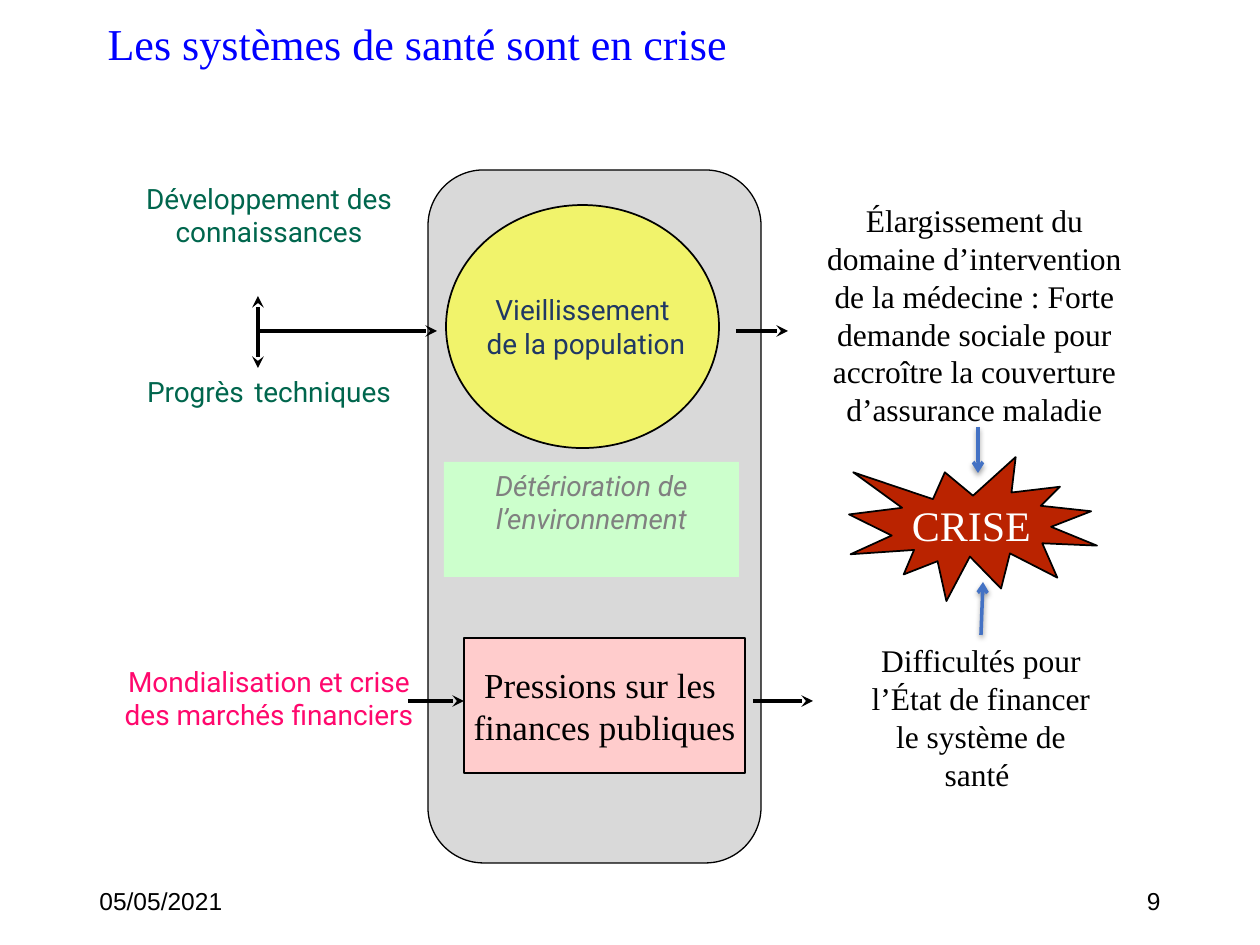
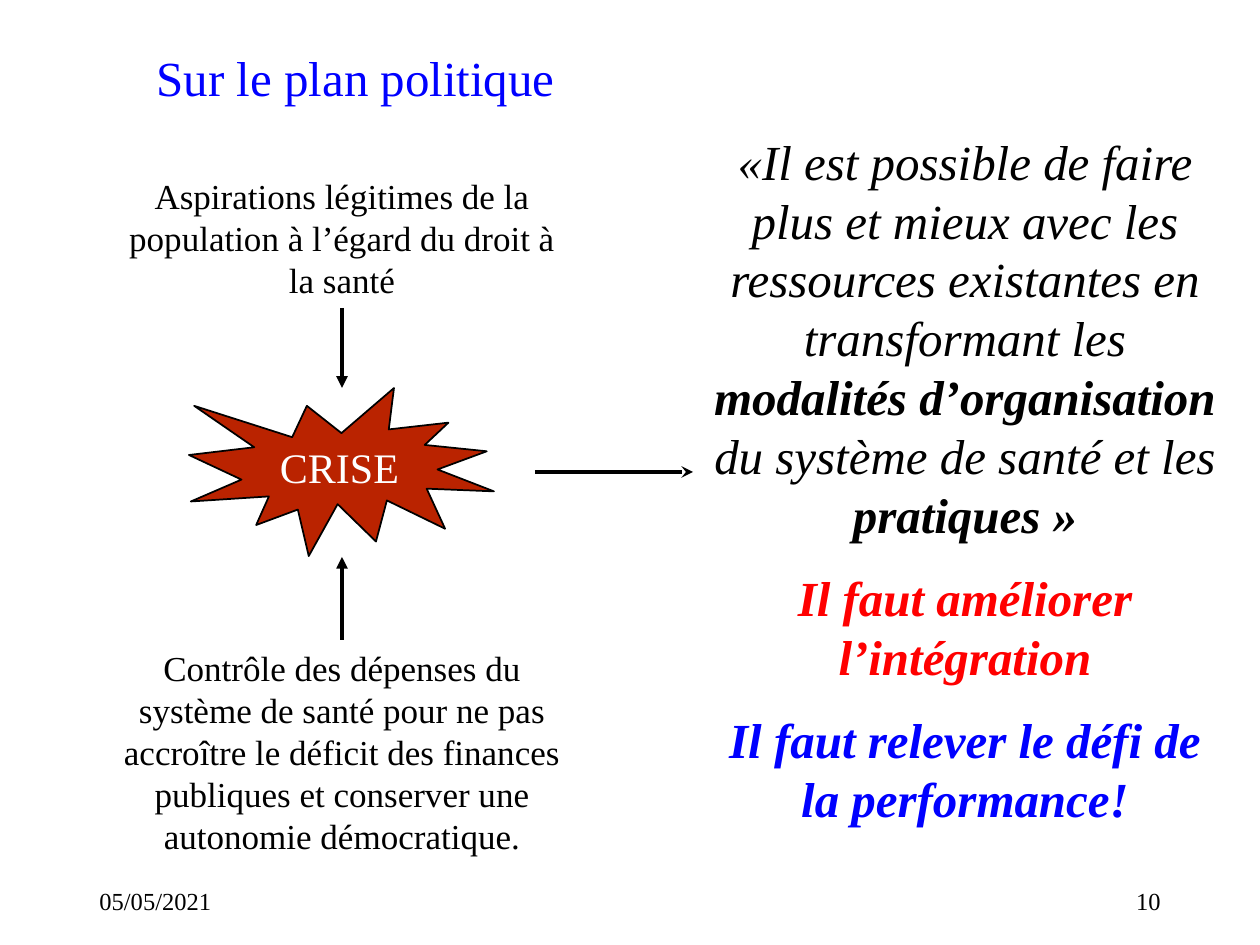
from dataclasses import dataclass

from pptx import Presentation
from pptx.dml.color import RGBColor
from pptx.enum.shapes import MSO_CONNECTOR, MSO_SHAPE
from pptx.enum.text import MSO_ANCHOR, MSO_AUTO_SIZE, PP_ALIGN
from pptx.oxml.ns import qn
from pptx.util import Pt
from lxml import etree

LEFT, CENTER, RIGHT = PP_ALIGN.LEFT, PP_ALIGN.CENTER, PP_ALIGN.RIGHT
TOP, MIDDLE = MSO_ANCHOR.TOP, MSO_ANCHOR.MIDDLE
RECTANGLE, OVAL = MSO_SHAPE.RECTANGLE, MSO_SHAPE.OVAL
ROUNDED, SEAL = MSO_SHAPE.ROUNDED_RECTANGLE, MSO_SHAPE.EXPLOSION1
STRAIGHT = MSO_CONNECTOR.STRAIGHT
SITE_TOP, SITE_BOTTOM = 0, 2
TITLE_ONLY = 5
EMU_PER_PX = 914400 / 126


@dataclass(frozen=True)
class Theme:
    serif: str = "Times New Roman"
    sans: str = "Roboto"
    plain: str = "Arial"
    black: str = "000000"
    white: str = "FFFFFF"
    blue: str = "0000FF"
    red: str = "FF0000"
    green: str = "00664D"
    pink: str = "FF086D"
    navy: str = "203864"
    gray: str = "808080"
    panel: str = "D9D9D9"
    yellow: str = "F1F36B"
    mint: str = "CCFFCC"
    rose: str = "FFCCCC"
    crisis: str = "BA2300"
    accent: str = "4472C4"
    footer_size: int = 14
    small: int = 16
    effect: int = 18
    body: int = 20
    large: int = 24
    quote: int = 28


THEME = Theme()


@dataclass(frozen=True)
class Style:
    font: str = THEME.serif
    size: float = THEME.body
    color: str = THEME.black
    bold: bool = False
    italic: bool = False


def px(length):
    return round(length * EMU_PER_PX)


def place(box, left, top, width, height):
    """Turn a position inside a box into slide lengths."""
    return px(box[0] + left), px(box[1] + top), px(width), px(height)


# ---- Text ----

def format_run(run, style):
    font = run.font
    font.name, font.size = style.font, Pt(style.size)
    font.bold, font.italic = style.bold, style.italic
    font.color.rgb = RGBColor.from_string(style.color)


def write(shape, paragraphs, align=CENTER, anchor=TOP, wrap=True, gap=0):
    """Fill a shape; each paragraph is a list of (text, style) runs."""
    frame = shape.text_frame
    frame.auto_size = MSO_AUTO_SIZE.NONE
    frame.word_wrap, frame.vertical_anchor = wrap, anchor
    for index, runs in enumerate(paragraphs):
        paragraph = frame.add_paragraph() if index else frame.paragraphs[0]
        paragraph.alignment = align
        if index:
            paragraph.space_before = Pt(gap)
        for text, style in runs:
            run = paragraph.add_run()
            run.text = text
            format_run(run, style)


def add_text(slide, box, area, paragraphs, **options):
    shape = slide.shapes.add_textbox(*place(box, *area))
    write(shape, paragraphs, **options)
    return shape


# ---- Shapes and arrows ----

def add_block(slide, box, area, kind, fill, line_width=None):
    shape = slide.shapes.add_shape(kind, *place(box, *area))
    shape.shadow.inherit = False
    shape.fill.solid()
    shape.fill.fore_color.rgb = RGBColor.from_string(fill)
    if line_width:
        shape.line.color.rgb = RGBColor.from_string(THEME.black)
        shape.line.width = Pt(line_width)
    else:
        shape.line.fill.background()
    return shape


def add_crisis(slide, box, area):
    seal = add_block(slide, box, area, SEAL, THEME.crisis, 1)
    style = Style(size=THEME.large, color=THEME.white)
    write(seal, [[("CRISE", style)]], anchor=MIDDLE, wrap=False)


def add_soft_shadow(effects):
    shadow = etree.SubElement(effects, qn("a:outerShdw"), blurRad="39370",
                              dist="20320", dir="5400000", rotWithShape="0")
    color = etree.SubElement(shadow, qn("a:srgbClr"), val=THEME.black)
    etree.SubElement(color, qn("a:alpha"), val="38000")


def add_arrow(slide, box, start, end, tip="stealth", both=False,
              color=THEME.black, width=2.25, shadow=False, source=None):
    """Draw an arrow; source is a (shape, site) pair joined to its start."""
    points = [px(box[axis] + point[axis])
              for point in (start, end) for axis in (0, 1)]
    arrow = slide.shapes.add_connector(STRAIGHT, *points)
    if source:
        arrow.begin_connect(*source)
    arrow.line.color.rgb = RGBColor.from_string(color)
    arrow.line.width = Pt(width)
    properties = arrow.element.spPr
    line = properties.find(qn("a:ln"))
    if both:
        etree.SubElement(line, qn("a:headEnd"), type=tip)
    etree.SubElement(line, qn("a:tailEnd"), type=tip)
    effects = etree.SubElement(properties, qn("a:effectLst"))
    if shadow:
        add_soft_shadow(effects)


# ---- Shared frame: title and footer ----

def add_slide(presentation, title, title_area, title_size, title_anchor,
              number, footer_font):
    slide = presentation.slides.add_slide(
        presentation.slide_layouts[TITLE_ONLY])
    heading = slide.shapes.title
    heading.left, heading.top, heading.width, heading.height = place(
        (0, 0), *title_area)
    write(heading, [[(title, Style(size=title_size, color=THEME.blue))]],
          align=LEFT, anchor=title_anchor)
    heading.text_frame.paragraphs[0].line_spacing = 0.9

    style = Style(footer_font, THEME.footer_size)
    for left, text, align in ((87, "05/05/2021", LEFT), (890, number, RIGHT)):
        add_text(slide, (left, 876), (0, 0, 283, 50), [[(text, style)]],
                 align=align, anchor=MIDDLE)
    return slide


# ---- Slide 1: pressures on health systems ----

def add_pressures(slide, box):
    add_block(slide, box, (0, 0, box[2], box[3]), ROUNDED, THEME.panel, 0.75)

    ageing = add_block(slide, box, (18, 35, 273, 243), OVAL, THEME.yellow, 1)
    style = Style(THEME.sans, THEME.small, THEME.navy)
    write(ageing, [[("Vieillissement", style)],
                   [(" de la population", style)]], anchor=MIDDLE, wrap=False)

    environment = add_block(slide, box, (16, 292, 295, 115), RECTANGLE,
                            THEME.mint)
    style = Style(THEME.sans, THEME.small, THEME.gray, italic=True)
    write(environment, [[("Détérioration de l’environnement", style)]])

    finances = add_block(slide, box, (36, 468, 281, 135), RECTANGLE,
                         THEME.rose, 1)
    write(finances, [[("Pressions sur les ", Style())],
                     [("finances publiques", Style())]],
          anchor=MIDDLE, wrap=False)

    add_arrow(slide, box, (308, 161), (360, 161))
    add_arrow(slide, box, (325, 531), (385, 531))


def add_causes(slide, box):
    knowledge = Style(THEME.sans, THEME.small, THEME.green)
    wide_space = Style(THEME.sans, THEME.large, THEME.green)
    market = Style(THEME.sans, THEME.small, THEME.pink)
    causes = (
        (0, 115, [("Développement des connaissances", knowledge)]),
        (179, 97, [("Progrès", knowledge), (" ", wide_space),
                   ("techniques", knowledge)]),
        (483, 115, [("Mondialisation et crise des marchés financiers",
                     market)]),
    )
    for top, height, runs in causes:
        add_text(slide, box, (0, top, box[2], height), [runs])

    add_arrow(slide, box, (147, 121), (147, 193), both=True)
    add_arrow(slide, box, (147, 156), (326, 156))
    add_arrow(slide, box, (297, 526), (353, 526))


def add_effects(slide, box):
    style = Style(size=THEME.effect)
    add_text(slide, box, (0, 0, box[2], 242), [[(
        "Élargissement du domaine d’intervention de la médecine : Forte "
        "demande sociale pour accroître la couverture d’assurance maladie",
        style)]])
    funding = add_text(slide, box, (60, 440, 246, 165), [[(
        "Difficultés pour l’État de financer le système de santé ", style)]])
    add_crisis(slide, box, (51, 262, 248, 144))

    look = dict(tip="arrow", color=THEME.accent, width=2, shadow=True)
    add_arrow(slide, box, (180, 232), (180, 278), **look)
    add_arrow(slide, box, (183, 440), (185, 387),
              source=(funding, SITE_TOP), **look)


def build_health_systems(presentation):
    slide = add_slide(presentation, "Les systèmes de santé sont en crise",
                      (95, 16, 1071, 101), 25.2, TOP, "9", THEME.plain)
    add_pressures(slide, (428, 170, 333, 693))
    add_causes(slide, (111, 175, 316, 598))
    add_effects(slide, (798, 195, 353, 605))


# ---- Slide 2: the political dilemma ----

def add_dilemma(slide, box):
    width = box[2]
    middle = width // 2
    add_crisis(slide, box, (78, 220, 305, 168))
    aspirations = add_text(slide, box, (0, 0, width, 140), [[(
        "Aspirations légitimes de la population à l’égard du droit à la santé",
        Style())]])
    spending = add_text(slide, box, (0, 472, width, 224), [[(
        "Contrôle des dépenses du système de santé pour ne pas accroître le "
        "déficit des finances publiques et conserver une autonomie "
        "démocratique.", Style())]])
    add_arrow(slide, box, (middle, 140), (middle, 220), tip="triangle",
              source=(aspirations, SITE_BOTTOM))
    add_arrow(slide, box, (middle, 472), (middle, 389), tip="triangle",
              source=(spending, SITE_TOP))
    add_arrow(slide, box, (424, 304), (582, 304))


def add_quote(slide, box):
    def strong(color):
        return Style(size=THEME.quote, color=color, bold=True, italic=True)

    regular = Style(size=THEME.quote, italic=True)
    add_text(slide, box, (0, 0, box[2], box[3]), [
        [("«Il est possible de faire plus et mieux avec les ressources "
          "existantes en transformant les ", regular),
         ("modalités d’organisation", strong(THEME.black)),
         (" du système de santé et les ", regular),
         ("pratiques »", strong(THEME.black))],
        [("Il faut améliorer l’intégration", strong(THEME.red))],
        [("Il faut relever le défi de la performance!", strong(THEME.blue))],
    ], gap=THEME.quote / 2)


def build_political_view(presentation):
    slide = add_slide(presentation, "Sur le plan politique",
                      (144, 37, 1085, 88), THEME.quote, MIDDLE, "10",
                      THEME.serif)
    add_dilemma(slide, (111, 168, 462, 696))
    add_quote(slide, (693, 125, 544, 750))


def main():
    presentation = Presentation()
    presentation.slide_width, presentation.slide_height = px(1260), px(945)
    build_health_systems(presentation)
    build_political_view(presentation)
    presentation.save("out.pptx")


if __name__ == "__main__":
    main()
